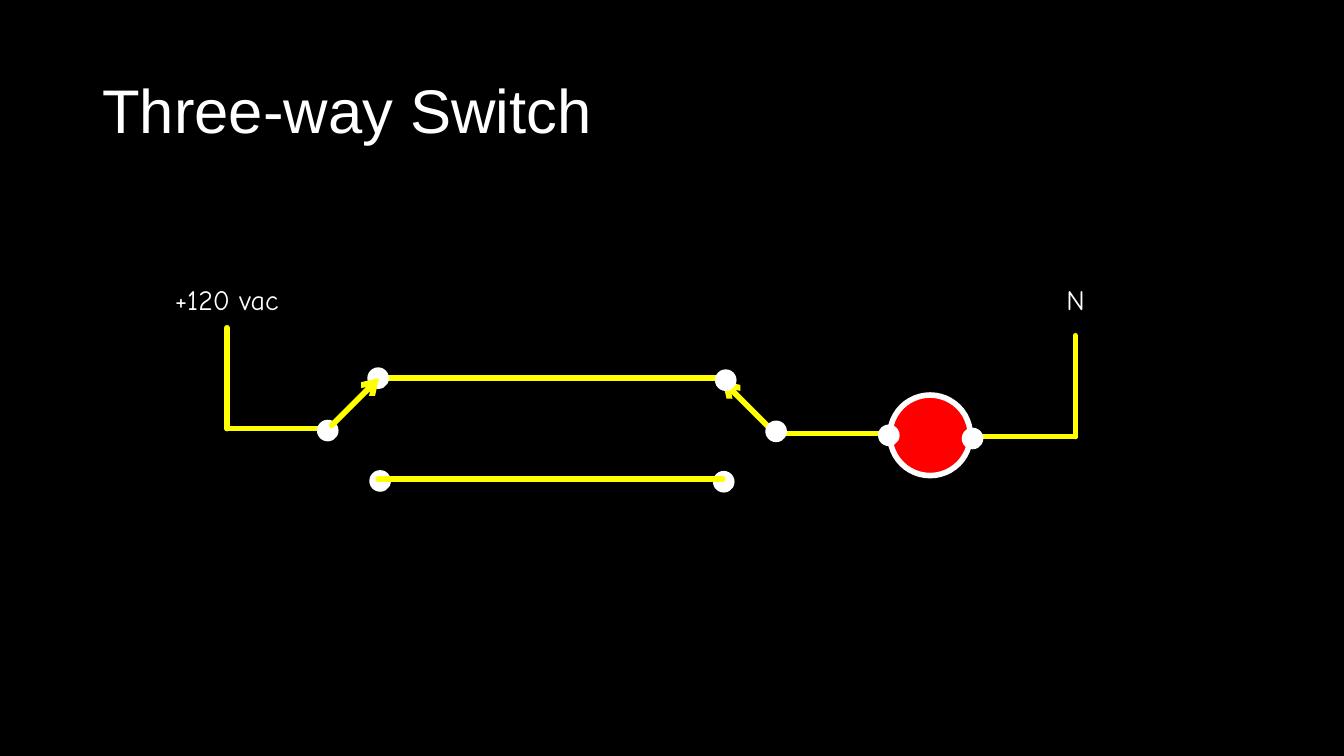
from dataclasses import dataclass

from lxml.etree import SubElement
from pptx import Presentation
from pptx.dml.color import RGBColor as Color
from pptx.enum.shapes import MSO_CONNECTOR as Connector, MSO_SHAPE as Shape
from pptx.enum.text import MSO_ANCHOR as Anchor, PP_ALIGN as Align
from pptx.oxml.ns import qn
from pptx.util import Cm, Pt


@dataclass(frozen=True)
class Theme:
    background: Color = Color(0, 0, 0)
    ink: Color = Color(255, 255, 255)
    wire: Color = Color(255, 255, 0)
    lamp: Color = Color(255, 0, 0)
    title_font: str = "Arial"
    label_font: str = "Comic Neue"
    title_size: int = 44
    label_size: int = 20
    heavy: int = 4
    thin: int = 1


THEME = Theme()
TERMINAL = 0.51
LAMP = 2.03


def add_text(page, text, left, top, width, height, font=THEME.label_font,
             size=THEME.label_size, align=Align.CENTER, anchor=Anchor.TOP,
             spacing=1.0):
    box = page.shapes.add_textbox(Cm(left), Cm(top), Cm(width), Cm(height))
    frame = box.text_frame
    frame.word_wrap = True
    frame.vertical_anchor = anchor
    para = frame.paragraphs[0]
    para.alignment = align
    para.line_spacing = spacing
    span = para.add_run()
    span.text = text
    span.font.name = font
    span.font.size = Pt(size)
    span.font.color.rgb = THEME.ink


def add_wire(page, start, end, arrow=False):
    wire = page.shapes.add_connector(
        Connector.STRAIGHT, *(Cm(value) for value in (*start, *end)))
    wire.line.color.rgb = THEME.wire
    wire.line.width = Pt(THEME.heavy)
    properties = wire._element.spPr
    outline = properties.find(qn("a:ln"))
    outline.set("cap", "rnd")
    SubElement(outline, qn("a:round"))
    if arrow:
        SubElement(outline, qn("a:tailEnd"), type="arrow")
    SubElement(properties, qn("a:effectLst"))


def add_circle(page, center, diameter=TERMINAL, fill=THEME.ink, weight=THEME.thin):
    x, y = center
    circle = page.shapes.add_shape(
        Shape.OVAL, Cm(x - diameter / 2), Cm(y - diameter / 2),
        Cm(diameter), Cm(diameter))
    circle.shadow.inherit = False
    circle.fill.solid()
    circle.fill.fore_color.rgb = fill
    circle.line.color.rgb = THEME.ink
    circle.line.width = Pt(weight)


def add_supply(page):
    add_wire(page, (5.72, 8.26), (5.72, 10.8))
    add_wire(page, (5.72, 10.8), (8.26, 10.8))
    add_text(page, "+120 vac", 3.81, 6.99, 3.81, 1.12)


def add_travelers(page):
    add_wire(page, (19.41, 10.8), (18.21, 9.6), arrow=True)
    add_wire(page, (19.81, 10.92), (22.35, 10.92))
    add_wire(page, (9.53, 9.53), (18.21, 9.53))
    for center in ((8.26, 10.85), (9.53, 9.53), (9.58, 12.12),
                   (19.56, 10.87), (18.29, 9.58), (18.24, 12.14)):
        add_circle(page, center)
    add_wire(page, (8.36, 10.72), (9.55, 9.53), arrow=True)
    add_wire(page, (9.53, 12.07), (18.21, 12.07))


def add_load(page):
    add_circle(page, (23.44, 10.97), LAMP, THEME.lamp, THEME.heavy)
    add_wire(page, (24.56, 11), (27.1, 11))
    add_wire(page, (27.1, 8.46), (27.1, 11))
    for center in ((22.4, 10.97), (24.51, 11.05)):
        add_circle(page, center)
    add_text(page, "N", 25.2, 6.99, 3.81, 1.12)


def main():
    deck = Presentation()
    deck.slide_width, deck.slide_height = Cm(33.87), Cm(19.05)
    page = deck.slides.add_slide(deck.slide_layouts[6])
    page.background.fill.solid()
    page.background.fill.fore_color.rgb = THEME.background
    add_text(page, "Three-way Switch", 2.33, 1.01, 29.21, 3.68,
             font=THEME.title_font, size=THEME.title_size, align=Align.LEFT,
             anchor=Anchor.MIDDLE, spacing=0.9)
    add_supply(page)
    add_travelers(page)
    add_load(page)
    deck.save("out.pptx")


if __name__ == "__main__":
    main()
